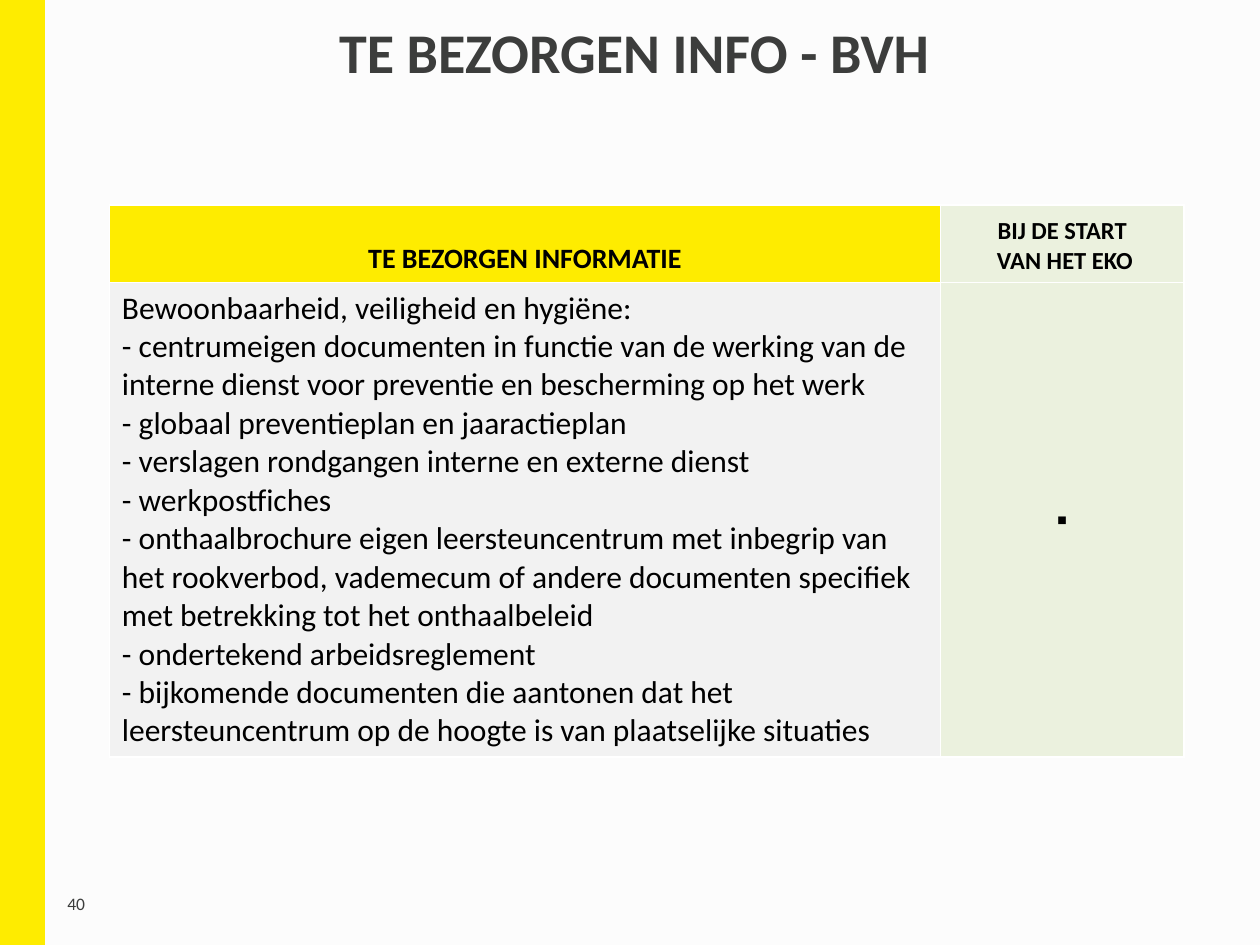
from lxml.etree import SubElement
from pptx import Presentation
from pptx.dml.color import RGBColor
from pptx.enum.shapes import MSO_SHAPE as SHAPE
from pptx.enum.text import MSO_ANCHOR as ANCHOR, PP_ALIGN as ALIGN
from pptx.oxml.ns import qn
from pptx.util import Pt

COLORS = {
    "background": "FCFCFC",
    "yellow": "FEEC00",
    "green": "EBF1DE",
    "gray": "F2F2F2",
    "text": "3C3D3C",
    "black": "000000",
    "border": "FFFFFF",
}

INFO = [
    "Bewoonbaarheid, veiligheid en hygiëne:",
    "- centrumeigen documenten in functie van de werking van de interne dienst "
    "voor preventie en bescherming op het werk",
    "- globaal preventieplan en jaaractieplan",
    "- verslagen rondgangen interne en externe dienst",
    "- werkpostfiches",
    "- onthaalbrochure eigen leersteuncentrum met inbegrip van het rookverbod, "
    "vademecum of andere documenten specifiek met betrekking tot het onthaalbeleid",
    "- ondertekend arbeidsreglement",
    "- bijkomende documenten die aantonen dat het leersteuncentrum op de hoogte "
    "is van plaatselijke situaties",
]

HEAD = {"size": Pt(16), "bold": True}
SUBHEAD = {"size": Pt(14), "bold": True}
BODY = {"size": Pt(18), "bold": False}
MARK = {"size": Pt(9), "bold": False, "name": "Arial"}

CELLS = [
    [
        (["TE BEZORGEN INFORMATIE"], "yellow", HEAD, ALIGN.CENTER, ANCHOR.BOTTOM),
        (["BIJ DE START", " VAN HET EKO"], "green", SUBHEAD, ALIGN.CENTER, ANCHOR.BOTTOM),
    ],
    [
        (INFO, "gray", BODY, ALIGN.LEFT, ANCHOR.MIDDLE),
        (["■"], "green", MARK, ALIGN.CENTER, ANCHOR.MIDDLE),
    ],
]


def rgb(name):
    return RGBColor.from_string(COLORS[name])


def paint(fill, color):
    fill.solid()
    fill.fore_color.rgb = rgb(color)


def write(tf, lines, color, align, font):
    for i, line in enumerate(lines):
        p = tf.paragraphs[0] if i == 0 else tf.add_paragraph()
        p.alignment = align
        r = p.add_run()
        r.text = line
        for key, value in ({"name": "Calibri"} | font).items():
            setattr(r.font, key, value)
        r.font.color.rgb = rgb(color)


def add_bar(s):
    bar = s.shapes.add_shape(SHAPE.RECTANGLE, 0, 0, Pt(25), Pt(540))
    bar.shadow.inherit = False
    paint(bar.fill, "yellow")
    bar.line.color.rgb = rgb("yellow")
    bar.line.width = Pt(1.5)


def set_title(s, text):
    title = s.shapes.title
    box = {"left": Pt(25), "top": Pt(-4.5), "width": Pt(675), "height": Pt(67.5)}
    for key, value in box.items():
        setattr(title, key, value)
    tf = title.text_frame
    tf.vertical_anchor = ANCHOR.MIDDLE
    write(tf, [text], "text", ALIGN.CENTER, {"size": Pt(32), "bold": True})


def add_page_number(s, number):
    tf = s.shapes.add_textbox(Pt(25), Pt(502), Pt(37), Pt(29)).text_frame
    tf.word_wrap = True
    tf.vertical_anchor = ANCHOR.MIDDLE
    write(tf, [number], "text", ALIGN.CENTER, {"size": Pt(10)})


def add_borders(cell):
    props = cell._tc.get_or_add_tcPr()
    for i, side in enumerate(("lnL", "lnR", "lnT", "lnB")):
        line = props.makeelement(qn(f"a:{side}"), {"w": str(Pt(1))})
        fill = SubElement(line, qn("a:solidFill"))
        SubElement(fill, qn("a:srgbClr"), val=COLORS["border"])
        props.insert(i, line)


def add_info_table(s):
    widths, heights = [475, 139], [44.5, 271]
    table = s.shapes.add_table(
        len(heights), len(widths), Pt(62.5), Pt(117),
        Pt(sum(widths)), Pt(sum(heights)),
    ).table
    for col, width in zip(table.columns, widths):
        col.width = Pt(width)
    for row, height, contents in zip(table.rows, heights, CELLS):
        row.height = Pt(height)
        for cell, (lines, color, font, align, anchor) in zip(row.cells, contents):
            paint(cell.fill, color)
            cell.vertical_anchor = anchor
            write(cell.text_frame, lines, "black", align, font)
            add_borders(cell)


def main():
    prs = Presentation()
    prs.slide_width, prs.slide_height = Pt(720), Pt(540)
    s = prs.slides.add_slide(prs.slide_layouts[5])
    paint(s.background.fill, "background")
    add_bar(s)
    set_title(s, "TE BEZORGEN INFO - BVH")
    add_page_number(s, "40")
    add_info_table(s)
    prs.save("out.pptx")


if __name__ == "__main__":
    main()
